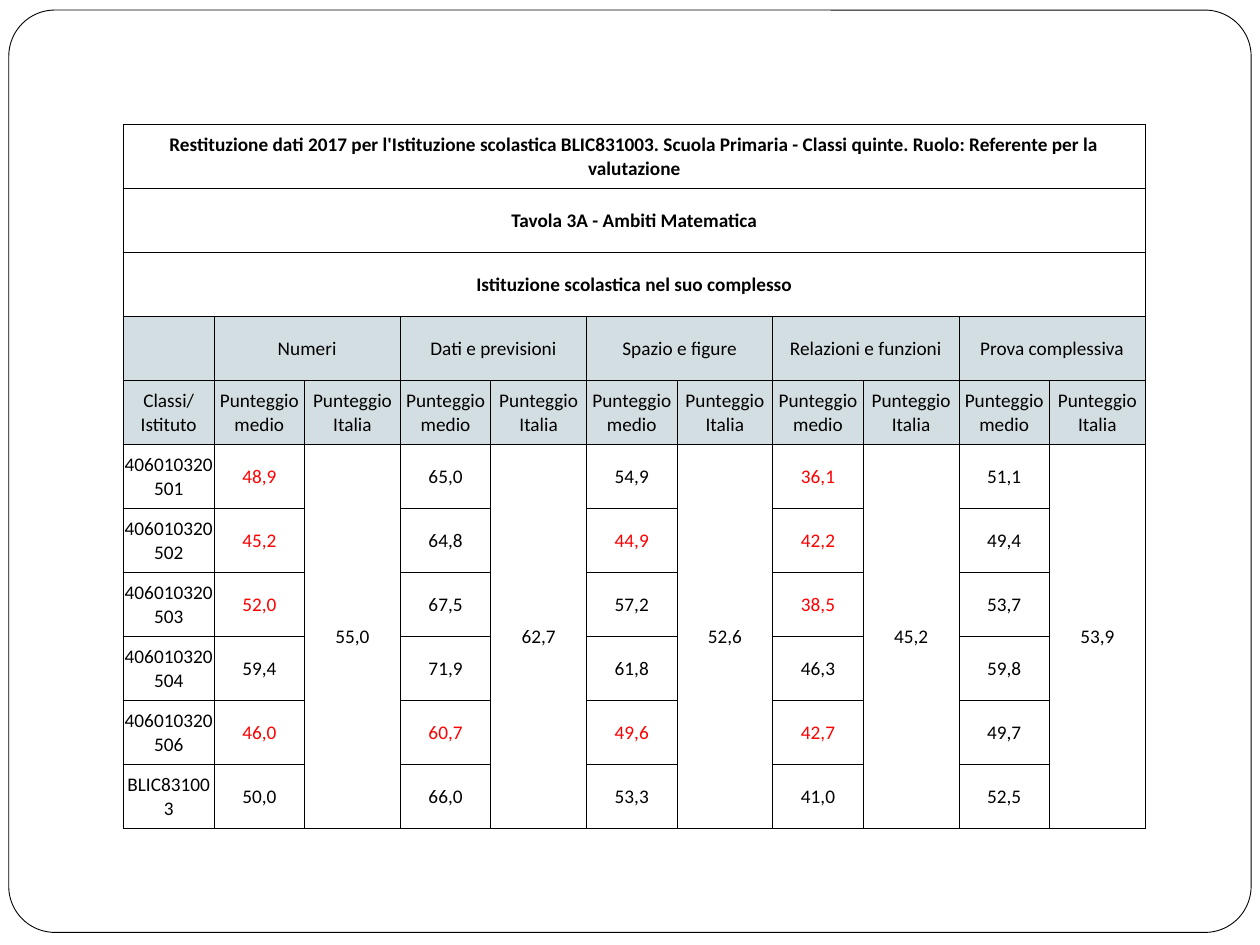
import lxml.etree
import pptx
import pptx.dml.color
import pptx.enum.shapes
import pptx.enum.text
import pptx.oxml.ns
import pptx.util

COLORS = {"ink": "000000", "paper": "FFFFFF", "header": "D3DEE2", "low": "FF0000"}
TITLES = [
    "Restituzione dati 2017 per l'Istituzione scolastica BLIC831003. "
    "Scuola Primaria - Classi quinte. Ruolo: Referente per la valutazione",
    "Tavola 3A - Ambiti Matematica",
    "Istituzione scolastica nel suo complesso",
]
AREAS = [
    ("Numeri", "55,0"),
    ("Dati e previsioni", "62,7"),
    ("Spazio e figure", "52,6"),
    ("Relazioni e funzioni", "45,2"),
    ("Prova complessiva", "53,9"),
]
SCORES = [
    ("406010320501", ["48,9", "65,0", "54,9", "36,1", "51,1"]),
    ("406010320502", ["45,2", "64,8", "44,9", "42,2", "49,4"]),
    ("406010320503", ["52,0", "67,5", "57,2", "38,5", "53,7"]),
    ("406010320504", ["59,4", "71,9", "61,8", "46,3", "59,8"]),
    ("406010320506", ["46,0", "60,7", "49,6", "42,7", "49,7"]),
    ("BLIC831003", ["50,0", "66,0", "53,3", "41,0", "52,5"]),
]
AREA_ROW = len(TITLES)
LABEL_ROW = AREA_ROW + 1
FIRST_SCORE_ROW = LABEL_ROW + 1
ROW_COUNT = FIRST_SCORE_ROW + len(SCORES)
COLUMN_COUNT = 1 + 2 * len(AREAS)
COLUMN_WEIGHTS = [0.72] + [0.72, 0.76] * len(AREAS)


def color(name):
    return pptx.dml.color.RGBColor.from_string(COLORS[name])


def add_borders(cell):
    properties = cell._tc.get_or_add_tcPr()
    for index, side in enumerate(("a:lnL", "a:lnR", "a:lnT", "a:lnB")):
        border = lxml.etree.Element(pptx.oxml.ns.qn(side), w=str(pptx.util.Pt(0.5)))
        fill = lxml.etree.SubElement(border, pptx.oxml.ns.qn("a:solidFill"))
        lxml.etree.SubElement(fill, pptx.oxml.ns.qn("a:srgbClr"), val=COLORS["ink"])
        properties.insert(index, border)


def style_cell(cell, shaded):
    cell.margin_left = cell.margin_right = cell.margin_top = cell.margin_bottom = 0
    cell.vertical_anchor = pptx.enum.text.MSO_ANCHOR.MIDDLE
    if shaded:
        cell.fill.solid()
        cell.fill.fore_color.rgb = color("header")
    else:
        cell.fill.background()
    add_borders(cell)


def write_cell(cell, text, ink="ink", bold=False):
    cell.text_frame.text = text
    paragraph = cell.text_frame.paragraphs[0]
    paragraph.alignment = pptx.enum.text.PP_ALIGN.CENTER
    font = paragraph.runs[0].font
    font.name = "Calibri"
    font.size = pptx.util.Pt(11)
    font.bold = bold
    font.color.rgb = color(ink)


def add_frame(slide, left, top, width, height):
    frame = slide.shapes.add_shape(
        pptx.enum.shapes.MSO_SHAPE.ROUNDED_RECTANGLE, left, top, width, height
    )
    frame.adjustments[0] = 0.05
    frame.shadow.inherit = False
    frame.fill.solid()
    frame.fill.fore_color.rgb = color("paper")
    frame.line.color.rgb = color("ink")
    frame.line.width = pptx.util.Pt(0.5)


def fill_headings(table):
    for row, title in enumerate(TITLES):
        table.cell(row, 0).merge(table.cell(row, COLUMN_COUNT - 1))
        write_cell(table.cell(row, 0), title, bold=True)
    write_cell(table.cell(LABEL_ROW, 0), "Classi/Istituto")
    for index, (area, _) in enumerate(AREAS):
        column = 1 + 2 * index
        table.cell(AREA_ROW, column).merge(table.cell(AREA_ROW, column + 1))
        write_cell(table.cell(AREA_ROW, column), area)
        write_cell(table.cell(LABEL_ROW, column), "Punteggio medio")
        write_cell(table.cell(LABEL_ROW, column + 1), "Punteggio Italia")


def fill_scores(table):
    for index, (_, national) in enumerate(AREAS):
        column = 2 + 2 * index
        table.cell(FIRST_SCORE_ROW, column).merge(table.cell(ROW_COUNT - 1, column))
        write_cell(table.cell(FIRST_SCORE_ROW, column), national)
    for row, (group, scores) in enumerate(SCORES, FIRST_SCORE_ROW):
        write_cell(table.cell(row, 0), group)
        for index, score in enumerate(scores):
            area, national = AREAS[index]
            compared = row < ROW_COUNT - 1 and area != "Prova complessiva"
            ink = "low" if compared and score < national else "ink"
            write_cell(table.cell(row, 1 + 2 * index), score, ink)


def add_score_table(slide, left, top, width, height):
    shape = slide.shapes.add_table(ROW_COUNT, COLUMN_COUNT, left, top, width, height)
    table = shape.table
    table.first_row = table.horz_banding = False
    for column, weight in zip(table.columns, COLUMN_WEIGHTS):
        column.width = round(width * weight / sum(COLUMN_WEIGHTS))
    for index, row in enumerate(table.rows):
        row.height = round(height / ROW_COUNT)
        for cell in row.cells:
            style_cell(cell, shaded=index in (AREA_ROW, LABEL_ROW))
    fill_headings(table)
    fill_scores(table)


def main():
    presentation = pptx.Presentation()
    presentation.slide_width = pptx.util.Inches(10)
    presentation.slide_height = pptx.util.Inches(7.5)
    slide = presentation.slides.add_slide(presentation.slide_layouts[6])
    inches = pptx.util.Inches
    add_frame(slide, inches(0.07), inches(0.08), inches(9.86), inches(7.32))
    add_score_table(slide, inches(0.98), inches(0.99), inches(8.11), inches(5.59))
    presentation.save("out.pptx")


if __name__ == "__main__":
    main()
